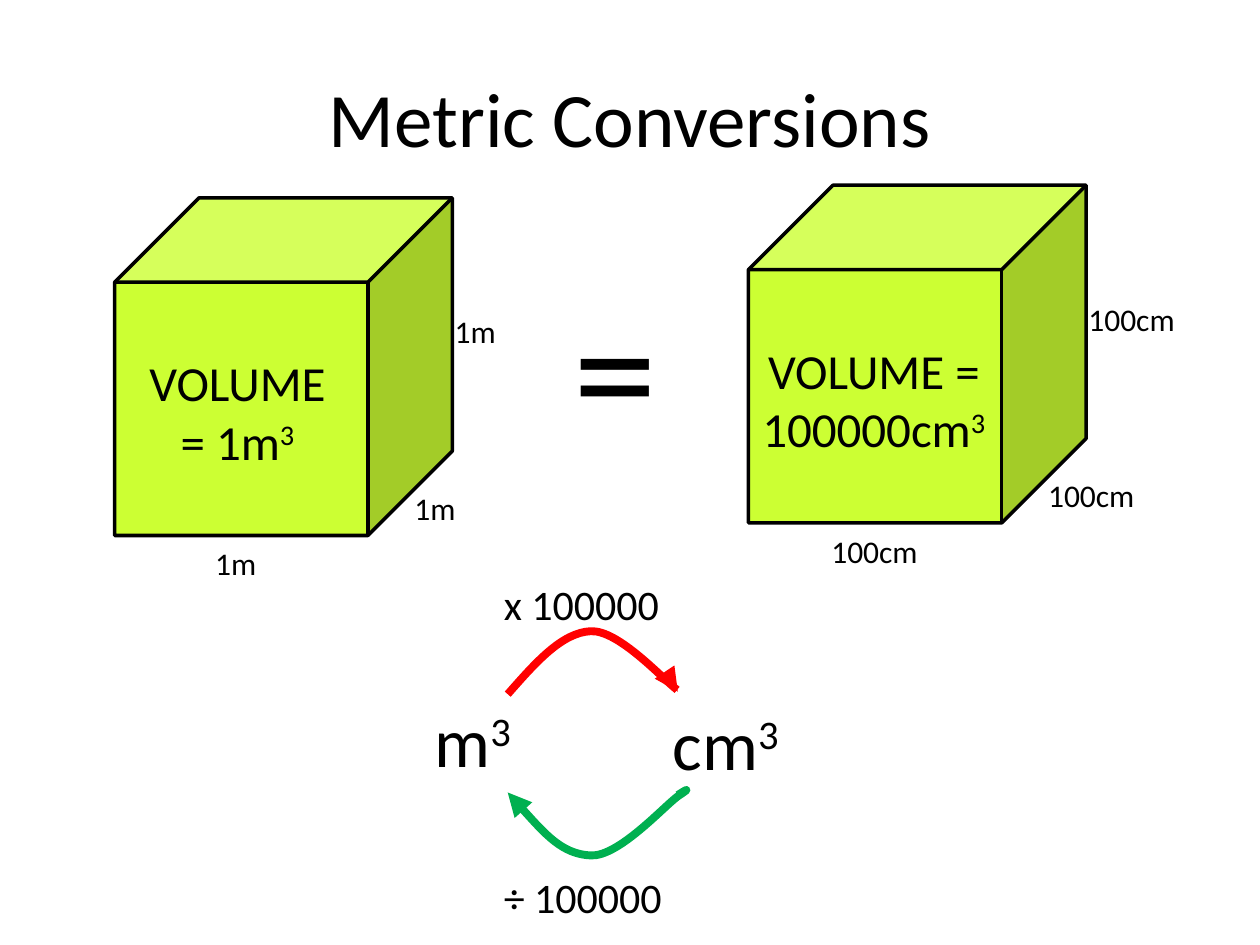
from lxml import etree
from pptx import Presentation
from pptx.dml.color import RGBColor
from pptx.enum.shapes import MSO_SHAPE
from pptx.enum.text import MSO_ANCHOR, MSO_AUTO_SIZE, PP_ALIGN
from pptx.oxml.ns import qn
from pptx.util import Inches, Pt

CUBE = MSO_SHAPE.CUBE
MIDDLE = MSO_ANCHOR.MIDDLE
GROW = MSO_AUTO_SIZE.SHAPE_TO_FIT_TEXT
LEFT, CENTER = PP_ALIGN.LEFT, PP_ALIGN.CENTER


def color(code):
    return RGBColor.from_string(code)


def write(box, text, size, power="", align=LEFT):
    frame = box.text_frame
    frame.word_wrap = True
    para = frame.paragraphs[0]
    para.alignment = align
    for part in filter(None, (text, power)):
        run = para.add_run()
        run.text = part
        run.font.name = "Calibri"
        run.font.size = Pt(size)
        run.font.color.rgb = color("000000")
    if power:
        run.font._element.set("baseline", "30000")


deck = Presentation()
deck.slide_width, deck.slide_height = Inches(10), Inches(7.5)
slide = deck.slides.add_slide(deck.slide_layouts[5])
shapes = slide.shapes

title = shapes.title
title.left, title.top = Inches(0.5), Inches(0.3)
title.width, title.height = Inches(9), Inches(1.25)
title.text_frame.vertical_anchor = MIDDLE
write(title, "Metric Conversions", 44, align=CENTER)

texts = []
for x, y, side, wide, base, volume, inset, span in [
    (0.91, 1.57, "1m", 0.79, 0.7, "VOLUME = 1m", 0.07, 1.81),
    (5.94, 1.47, "100cm", 0.94, 0.56, "VOLUME = 100000cm", -0.07, 2.13),
]:
    cube = shapes.add_shape(CUBE, Inches(x), Inches(y), Inches(2.68), Inches(2.68))
    cube.shadow.inherit = False
    cube.fill.solid()
    cube.fill.fore_color.rgb = color("CCFF33")
    cube.line.color.rgb = color("000000")
    cube.line.width = Pt(2)
    for dx, dy in [(base, 2.7), (2.28, 2.26), (2.6, 0.86)]:
        texts.append((x + dx, y + dy, wide, 0.4, side, 18, "", LEFT))
    texts.append((x + inset, y + 1.18, span, 1.04, volume, 28, "3", CENTER))

texts += [
    (4.45, 2.04, 0.94, 1.72, "=", 96, "", LEFT),
    (3.35, 5.49, 1.73, 0.77, "m", 40, "3", LEFT),
    (5.24, 5.51, 1.73, 0.77, "cm", 40, "3", LEFT),
    (3.9, 4.54, 1.47, 0.5, "x 100000", 24, "", LEFT),
    (3.9, 6.87, 1.5, 0.5, "÷ 100000", 24, "", LEFT),
]
for x, y, w, h, text, size, power, align in texts:
    box = shapes.add_textbox(Inches(x), Inches(y), Inches(w), Inches(h))
    write(box, text, size, power, align)
    box.text_frame.auto_size = GROW

curve = [
    (4.03, 5.51), (4.25, 5.26), (4.46, 5.02), (4.69, 5.01), (4.91, 5),
    (5.27, 5.4), (5.38, 5.48), (5.5, 5.56), (5.44, 5.53), (5.38, 5.49),
]
flipped = [(x, 11.8 - y) for x, y in curve]
for points, code, end in [(curve, "FF0000", "tailEnd"), (flipped, "00B050", "headEnd")]:
    spots = [(Inches(x), Inches(y)) for x, y in points]
    pen = shapes.build_freeform(*spots[0], scale=1.0)
    pen.add_line_segments(spots[1:], close=False)
    arrow = pen.convert_to_shape()
    arrow.shadow.inherit = False
    arrow.fill.background()
    arrow.line.color.rgb = color(code)
    arrow.line.width = Pt(4.5)
    route = arrow.element.find(".//" + qn("a:path"))
    steps = route.findall(qn("a:lnTo"))
    for i in range(0, len(steps), 3):
        bend = etree.SubElement(route, qn("a:cubicBezTo"))
        for step in steps[i:i + 3]:
            bend.append(step[0])
            route.remove(step)
    line = arrow.element.find(".//" + qn("a:ln"))
    etree.SubElement(line, qn("a:" + end), type="triangle")

deck.save("out.pptx")
